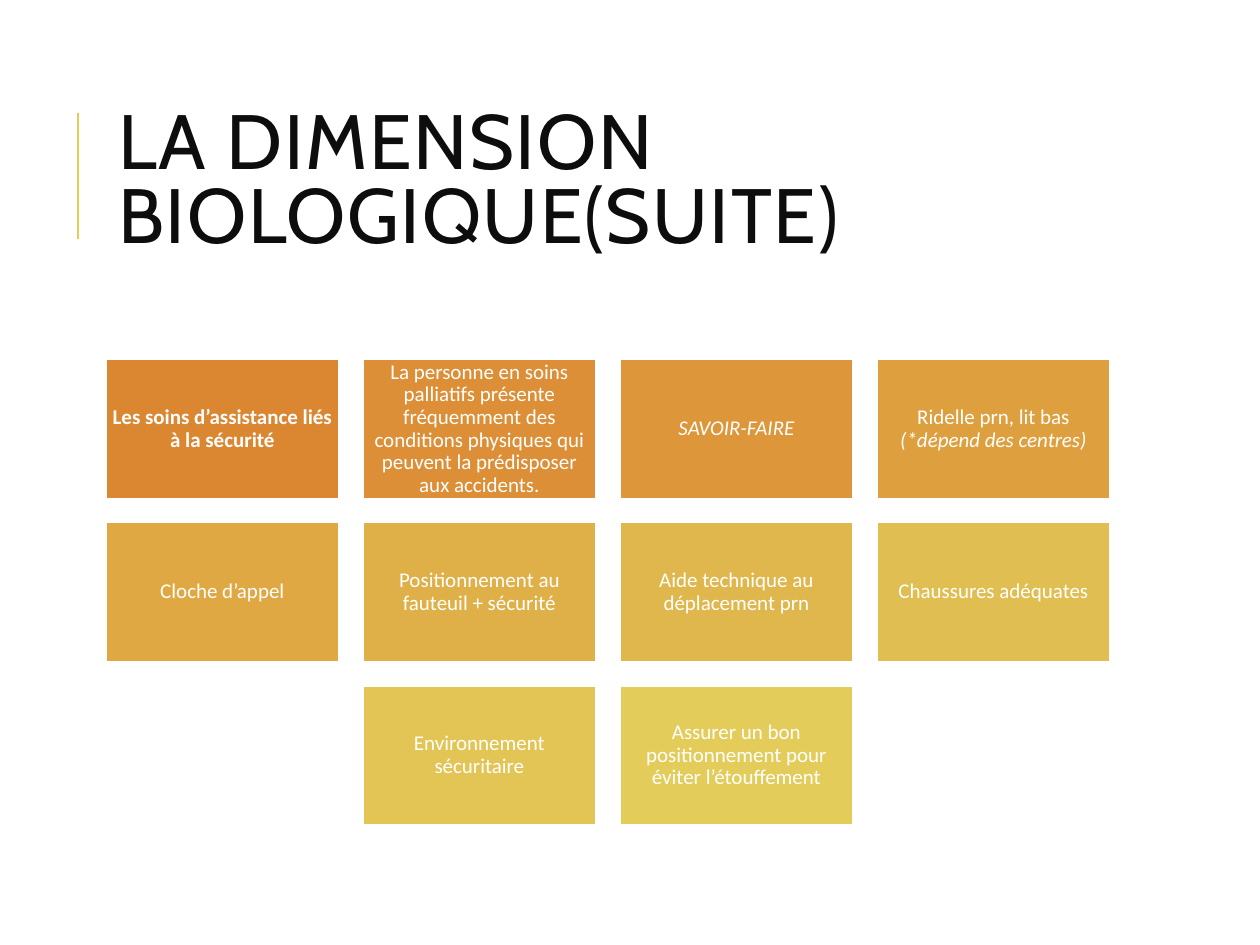
from lxml.etree import SubElement
from pptx import Presentation
from pptx.dml.color import RGBColor
from pptx.enum.shapes import MSO_CONNECTOR as Connector, MSO_SHAPE as Shape
from pptx.enum.text import MSO_ANCHOR as Anchor, PP_ALIGN as Align
from pptx.oxml.ns import qn
from pptx.util import Inches, Pt

WHITE = RGBColor(0xFF, 0xFF, 0xFF)
INK = RGBColor(0x0D, 0x0D, 0x0D)
GOLD = RGBColor(0xE3, 0xCC, 0x5A)
CARD_COLORS = [RGBColor.from_string(code) for code in (
    "DB8631", "DC8F36", "DD973A", "DEA03F", "DFA843",
    "DFB048", "E0B74C", "E1BE51", "E2C555", "E3CC5A",
)]

PLAIN, BOLD, ITALIC = {}, {"bold": True}, {"italic": True}
CARDS = [
    [("Les soins d’assistance liés à la sécurité", BOLD)],
    [("La personne en soins palliatifs présente fréquemment des conditions "
      "physiques qui peuvent la prédisposer aux accidents.", PLAIN)],
    [("SAVOIR-FAIRE", ITALIC)],
    [("Ridelle prn, lit bas ", PLAIN), ("(*dépend des centres)", ITALIC)],
    [("Cloche d’appel", PLAIN)],
    [("Positionnement au fauteuil + sécurité", PLAIN)],
    [("Aide technique au déplacement prn", PLAIN)],
    [("Chaussures adéquates", PLAIN)],
    [("Environnement sécuritaire", PLAIN)],
    [("Assurer un bon positionnement pour éviter l’étouffement", PLAIN)],
]

COLUMNS = 4
GRID_LEFT, GRID_TOP = 0.84, 2.85
CARD_WIDTH, CARD_HEIGHT = 1.85, 1.11
COLUMN_STEP, ROW_STEP = 2.04, 1.295


def write_text(frame, pieces, *, font, size, color, align=Align.LEFT,
               line_spacing=1.0, tracking=0, inset=None):
    frame.word_wrap = True
    frame.vertical_anchor = Anchor.MIDDLE
    if inset is not None:
        frame.margin_left = frame.margin_right = Inches(inset)
        frame.margin_top = frame.margin_bottom = Inches(inset)
    paragraph = frame.paragraphs[0]
    paragraph.alignment = align
    paragraph.line_spacing = line_spacing
    for words, style in pieces:
        run = paragraph.add_run()
        run.text = words
        run.font.name = font
        run.font.size = Pt(size)
        run.font.color.rgb = color
        run.font.bold = style.get("bold", False)
        run.font.italic = style.get("italic", False)
        if tracking:
            run._r.get_or_add_rPr().set("spc", str(tracking * 100))


def add_title(slide, title):
    heading = slide.shapes.add_textbox(
        Inches(0.84), Inches(0.64), Inches(7.97), Inches(1.64))
    write_text(heading.text_frame, [(title, PLAIN)], font="Cabin", size=44,
               color=INK, line_spacing=0.8, tracking=1)


def add_title_rule(slide):
    rule = slide.shapes.add_connector(
        Connector.STRAIGHT, Inches(0.62), Inches(1.9), Inches(0.62), Inches(0.9))
    rule.line.color.rgb = GOLD
    rule.line.width = Pt(1.5)
    SubElement(rule._element.spPr, qn("a:effectLst"))


def add_card(slide, left, top, pieces, color):
    card = slide.shapes.add_shape(
        Shape.RECTANGLE, Inches(left), Inches(top),
        Inches(CARD_WIDTH), Inches(CARD_HEIGHT))
    card.shadow.inherit = False
    card.fill.solid()
    card.fill.fore_color.rgb = color
    card.line.color.rgb = WHITE
    card.line.width = Pt(1.25)
    write_text(card.text_frame, pieces, font="Calibri", size=12, color=WHITE,
               align=Align.CENTER, line_spacing=0.9, inset=0.05)


def add_card_grid(slide):
    for index, (pieces, color) in enumerate(zip(CARDS, CARD_COLORS)):
        row, column = divmod(index, COLUMNS)
        cards_in_row = min(COLUMNS, len(CARDS) - row * COLUMNS)
        centring = (COLUMNS - cards_in_row) / 2
        add_card(slide, GRID_LEFT + (column + centring) * COLUMN_STEP,
                 GRID_TOP + row * ROW_STEP, pieces, color)


def main():
    deck = Presentation()
    deck.slide_width, deck.slide_height = Inches(10), Inches(7.5)
    slide = deck.slides.add_slide(deck.slide_layouts[6])
    add_title_rule(slide)
    add_title(slide, "LA DIMENSION BIOLOGIQUE(SUITE)")
    add_card_grid(slide)
    deck.save("out.pptx")


if __name__ == "__main__":
    main()
